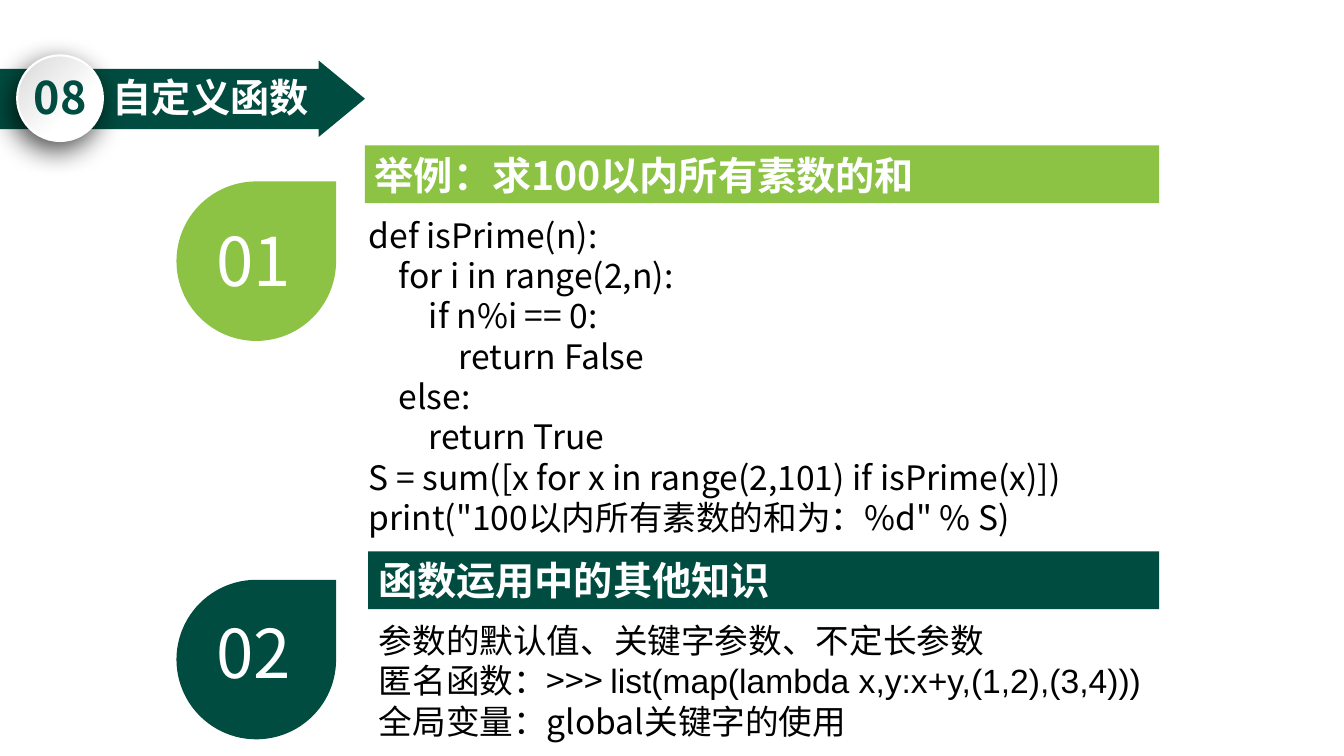
from lxml.etree import fromstring
from pptx import Presentation
from pptx.dml.color import RGBColor
from pptx.enum.shapes import MSO_SHAPE
from pptx.enum.text import MSO_ANCHOR, PP_ALIGN
from pptx.oxml.ns import qn
from pptx.util import Inches, Pt

WIDE, HIGH = Inches(13.33), Inches(7.5)
COLS, ROWS = 100, 100  # grid of the slide
DARK = RGBColor(0x00, 0x4C, 0x40)
LIME = RGBColor(0x8C, 0xC3, 0x44)
WHITE = RGBColor(0xFF, 0xFF, 0xFF)
SILVER = RGBColor(0xDB, 0xDB, 0xDD)
BLACK = RGBColor(0x00, 0x00, 0x00)
FONT = "Noto Sans CJK SC"
SPACE = "http://schemas.openxmlformats.org/drawingml/2006/main"

CODE = """def isPrime(n):
    for i in range(2,n):
        if n%i == 0:
            return False
    else:
        return True
S = sum([x for x in range(2,101) if isPrime(x)])
print("100以内所有素数的和为：%d" % S)"""
NOTES = [
    [("参数的默认值、关键字参数、不定长参数", FONT)],
    [("匿名函数：>>> ", FONT),
     ("list(map(lambda x,y:x+y,(1,2),(3,4)))", "Arial")],
    [("全局变量：global关键字的使用", FONT)],
]


def area(col, row, cols, rows):
    """Turn grid units into slide lengths."""
    return (int(WIDE * col / COLS), int(HIGH * row / ROWS),
            int(WIDE * cols / COLS), int(HIGH * rows / ROWS))


def plain(text):
    return [[(text, FONT)]]


def write(shape, lines, size, color, bold=False, align=PP_ALIGN.LEFT,
          anchor=MSO_ANCHOR.TOP, wrap=True):
    frame = shape.text_frame
    frame.word_wrap = wrap
    frame.vertical_anchor = anchor
    for num, line in enumerate(lines):
        para = frame.add_paragraph() if num else frame.paragraphs[0]
        para.alignment = align
        for text, face in line:
            run = para.add_run()
            run.text = text
            font = run.font
            font.name, font.size, font.bold = face, Pt(size), bold
            font.color.rgb = color
            east = fromstring(f'<a:ea xmlns:a="{SPACE}" typeface="{FONT}"/>')
            run._r.rPr.find(qn("a:latin")).addnext(east)


def draw(slide, kind, box, color):
    shape = slide.shapes.add_shape(kind, *box)
    shape.shadow.inherit = False
    shape.fill.solid()
    shape.fill.fore_color.rgb = color
    shape.line.fill.background()
    return shape


def label(slide, box, lines, size, color, **style):
    shape = slide.shapes.add_textbox(*box)
    write(shape, lines, size, color, **style)


def badge(slide, box, text):
    """Round number plate with a soft gradient and shadow."""
    disc = draw(slide, MSO_SHAPE.OVAL, box, WHITE)
    disc.line.color.rgb = WHITE
    disc.line.width = Pt(1.5)
    props = disc._element.spPr
    grad = fromstring(
        f'<a:gradFill xmlns:a="{SPACE}" rotWithShape="1"><a:gsLst>'
        f'<a:gs pos="34000"><a:srgbClr val="{WHITE}"/></a:gs>'
        f'<a:gs pos="96000"><a:srgbClr val="{SILVER}"/></a:gs></a:gsLst>'
        '<a:path path="circle"><a:fillToRect l="100000" t="100000"/></a:path>'
        '</a:gradFill>')
    props.replace(props.find(qn("a:solidFill")), grad)
    glow = fromstring(
        f'<a:outerShdw xmlns:a="{SPACE}" blurRad="{Pt(20)}" dist="{Pt(7)}" '
        'dir="7200000" algn="tr" rotWithShape="0"><a:srgbClr val="000000">'
        '<a:alpha val="70000"/></a:srgbClr></a:outerShdw>')
    props.find(qn("a:effectLst")).append(glow)
    label(slide, area(1.65, 8.5, 5.7, 8.5), plain(text), 32, DARK, bold=True,
          align=PP_ALIGN.CENTER, wrap=False)


def header(slide):
    draw(slide, MSO_SHAPE.RECTANGLE, area(0, 9.1, 23.8, 8), DARK)
    tip = draw(slide, MSO_SHAPE.ISOSCELES_TRIANGLE,
               area(22.58, 10, 5.7, 6.13), DARK)
    tip.rotation = 90
    label(slide, area(7.65, 9.1, 58.2, 11.6), plain("自定义函数"), 28, WHITE,
          bold=True)
    badge(slide, area(1.28, 7.33, 6.38, 11.33), "08")


def drop(slide, row, num, color, shift):
    """Teardrop with its number."""
    draw(slide, MSO_SHAPE.TEAR, area(13.13, row, 11.88, 21.1), color)
    label(slide, area(15.15, row + shift, 7.4, 12.1), plain(num), 48, WHITE,
          align=PP_ALIGN.CENTER, wrap=False)


def band(slide, col, row, text, color):
    """Section title bar that ends at a shared right edge."""
    bar = draw(slide, MSO_SHAPE.RECTANGLE,
               area(col, row, 86.25 - col, 7.63), color)
    write(bar, plain(text), 28, WHITE, bold=True, anchor=MSO_ANCHOR.MIDDLE)


def main():
    deck = Presentation()
    deck.slide_width, deck.slide_height = WIDE, HIGH
    slide = deck.slides.add_slide(deck.slide_layouts[6])
    slide.background.fill.solid()
    slide.background.fill.fore_color.rgb = WHITE

    header(slide)

    # Example code
    drop(slide, 24, "01", LIME, 4.4)
    code = [[(line, FONT)] for line in CODE.splitlines()]
    label(slide, area(26.7, 27.73, 59.5, 44.4), code, 24, BLACK,
          align=PP_ALIGN.JUSTIFY)
    band(slide, 27.15, 19.25, "举例：求100以内所有素数的和", LIME)

    # Further topics
    drop(slide, 76.7, "02", DARK, 3.45)
    label(slide, area(27.45, 81.33, 66.7, 17.5), NOTES, 24, BLACK,
          align=PP_ALIGN.JUSTIFY)
    band(slide, 27.4, 72.95, "函数运用中的其他知识", DARK)

    deck.save("out.pptx")


if __name__ == "__main__":
    main()
